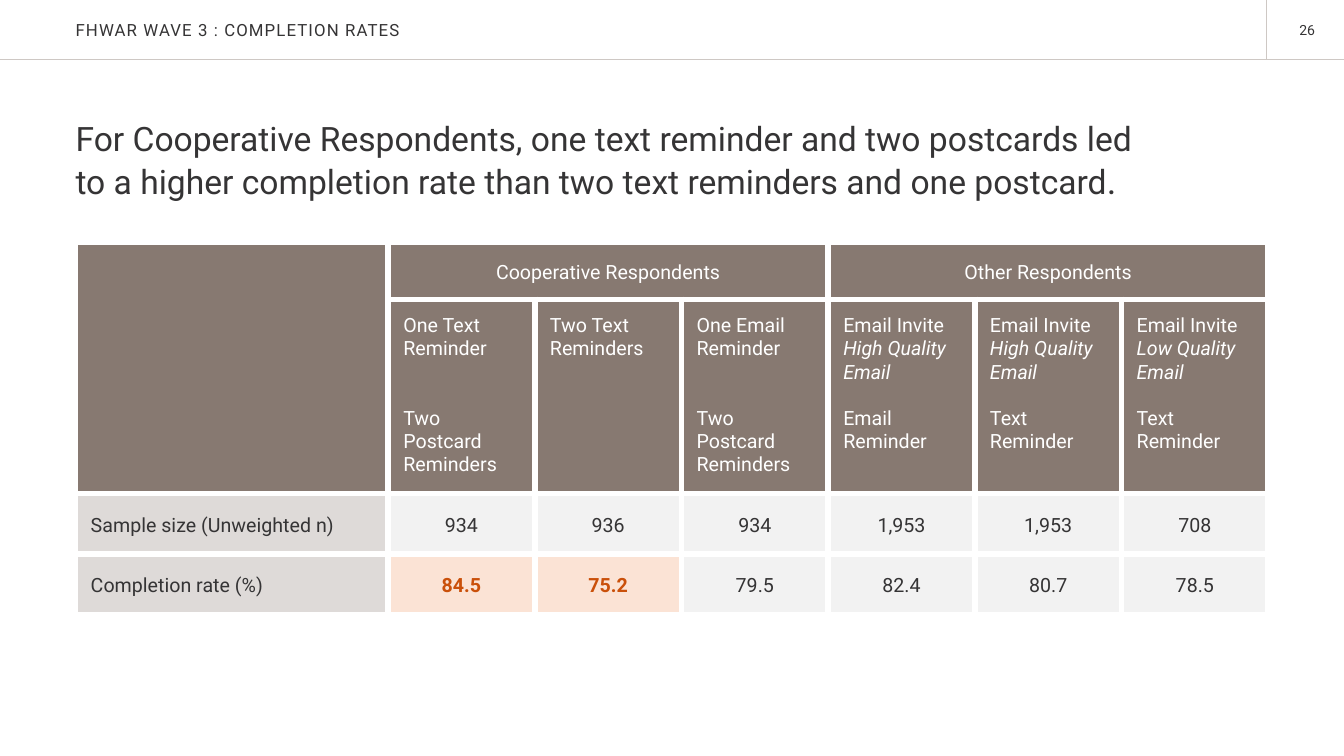
from lxml.etree import SubElement
from pptx import Presentation
from pptx.dml.color import RGBColor
from pptx.enum.shapes import MSO_CONNECTOR
from pptx.enum.text import MSO_ANCHOR as Anchor, PP_ALIGN as Align
from pptx.oxml.ns import qn
from pptx.util import Inches, Pt

FONT = "Roboto"
INK, WHITE, RULE, ACCENT = "353435", "FFFFFF", "CEC8C4", "CA500A"
HEADER_FILL, LABEL_FILL, VALUE_FILL, ACCENT_FILL = "877971", "DEDAD8", "F2F2F2", "FBE3D5"

SECTION = "FHWAR WAVE 3 : COMPLETION RATES"
PAGE_NUMBER = "26"
HEADLINE = [
    ("For Cooperative Respondents, one text reminder and two postcards led to a higher "
     "completion rate than two text reminders and one postcard", {"size": 24}),
    (".", {"size": 26}),
]
GROUPS = ["Cooperative Respondents", "Other Respondents"]
# Each line of a treatment: text, blank lines' worth of space before it, italic
TREATMENTS = [
    [("One Text Reminder", 0, False), ("Two Postcard Reminders", 2, False)],
    [("Two Text Reminders", 0, False)],
    [("One Email Reminder", 0, False), ("Two Postcard Reminders", 2, False)],
    [("Email Invite", 0, False), ("High Quality Email", 0, True), ("Email Reminder", 1, False)],
    [("Email Invite", 0, False), ("High Quality Email", 0, True), ("Text Reminder", 1, False)],
    [("Email Invite", 0, False), ("Low Quality Email", 0, True), ("Text Reminder", 1, False)],
]
RESULTS = [
    ("Sample size (Unweighted n)", ["934", "936", "934", "1,953", "1,953", "708"]),
    ("Completion rate (%)", ["84.5", "75.2", "79.5", "82.4", "80.7", "78.5"]),
]
HIGHLIGHTED = {"84.5", "75.2"}

WIDTH, HEIGHT = 13.33, 7.5
LEFT, BAR_HEIGHT, NUMBER_LEFT = 0.75, 0.59, 12.56
TABLE_TOP, LABEL_WIDTH, VALUE_WIDTH = 2.4, 3.1, 1.455
ROW_HEIGHTS = [0.57, 1.9, 0.6, 0.6]
PADDING, GAP_POINTS, LINE_POINTS = 0.15, 4.5, 16.5
GROUP_SIZE = len(TREATMENTS) // len(GROUPS)


def rgb(value):
    return RGBColor.from_string(value)


def add_span(para, text, size=14, color=INK, **formats):
    span = para.add_run()
    span.text = text
    span.font.color.rgb = rgb(color)
    for name, value in {"name": FONT, "size": Pt(size), **formats}.items():
        setattr(span.font, name, value)
    return span


def add_box(page, left, top, width, height, margin=0, anchor=Anchor.TOP):
    """Add a wrapping text box and return its first paragraph."""
    frame = page.shapes.add_textbox(*map(Inches, (left, top, width, height))).text_frame
    frame.word_wrap = True
    frame.vertical_anchor = anchor
    for side in ("left", "right", "top", "bottom"):
        setattr(frame, f"margin_{side}", Inches(margin))
    return frame.paragraphs[0]


def add_rule(page, *ends):
    line = page.shapes.add_connector(MSO_CONNECTOR.STRAIGHT, *map(Inches, ends))
    line.line.color.rgb = rgb(RULE)
    line.line.width = Pt(0.65)
    SubElement(line._element.spPr, qn("a:effectLst"))


def style_cell(cell, fill, anchor=Anchor.MIDDLE):
    """Give a cell its white gaps, padding and fill."""
    properties = cell._tc.get_or_add_tcPr()
    for edge in "LRTB":
        border = SubElement(properties, qn(f"a:ln{edge}"), w=str(Pt(GAP_POINTS)))
        SubElement(SubElement(border, qn("a:solidFill")), qn("a:srgbClr"), val=WHITE)
    for side in ("left", "right", "top", "bottom"):
        setattr(cell, f"margin_{side}", Inches(PADDING))
    cell.vertical_anchor = anchor
    cell.fill.solid()
    cell.fill.fore_color.rgb = rgb(fill)


def write_cell(cell, text, align=Align.CENTER, **formats):
    para = cell.text_frame.paragraphs[0]
    para.alignment = align
    para.line_spacing = 1.15
    add_span(para, text, **formats)


def write_treatment(cell, lines):
    frame = cell.text_frame
    for index, (text, blanks, italic) in enumerate(lines):
        para = frame.add_paragraph() if index else frame.paragraphs[0]
        para.space_before = Pt(blanks * LINE_POINTS)
        add_span(para, text, color=WHITE, italic=italic)


def add_results_table(page):
    widths = [LABEL_WIDTH] + [VALUE_WIDTH] * len(TREATMENTS)
    table = page.shapes.add_table(
        len(ROW_HEIGHTS), len(widths), Inches(LEFT), Inches(TABLE_TOP),
        Inches(sum(widths)), Inches(sum(ROW_HEIGHTS))).table
    table.first_row = table.horz_banding = False
    for column, width in zip(table.columns, widths):
        column.width = Inches(width)
    for row, height in zip(table.rows, ROW_HEIGHTS):
        row.height = Inches(height)

    for column in range(len(widths)):
        style_cell(table.cell(0, column), HEADER_FILL)
        style_cell(table.cell(1, column), HEADER_FILL, Anchor.TOP)
    table.cell(0, 0).merge(table.cell(1, 0))
    for index, group in enumerate(GROUPS):
        first = 1 + index * GROUP_SIZE
        table.cell(0, first).merge(table.cell(0, first + GROUP_SIZE - 1))
        write_cell(table.cell(0, first), group, color=WHITE)
    for column, lines in enumerate(TREATMENTS, 1):
        write_treatment(table.cell(1, column), lines)

    for row, (label, values) in enumerate(RESULTS, 2):
        style_cell(table.cell(row, 0), LABEL_FILL)
        write_cell(table.cell(row, 0), label, Align.LEFT)
        for column, value in enumerate(values, 1):
            marked = value in HIGHLIGHTED
            cell = table.cell(row, column)
            style_cell(cell, ACCENT_FILL if marked else VALUE_FILL)
            write_cell(cell, value, color=ACCENT if marked else INK, bold=marked)


def main():
    deck = Presentation()
    deck.slide_width, deck.slide_height = Inches(WIDTH), Inches(HEIGHT)
    page = deck.slides.add_slide(deck.slide_layouts[6])

    number = add_box(page, 12.64, 0, 0.5, 0.6, margin=0.1, anchor=Anchor.MIDDLE)
    number.alignment = Align.RIGHT
    add_span(number, PAGE_NUMBER, size=10)
    add_rule(page, 0, BAR_HEIGHT, WIDTH, BAR_HEIGHT)
    add_rule(page, NUMBER_LEFT, 0, NUMBER_LEFT, BAR_HEIGHT)

    section = add_box(page, LEFT, 0, 8.19, 0.6, anchor=Anchor.MIDDLE)
    span = add_span(section, SECTION, size=12)
    span._r.get_or_add_rPr().set("spc", "80")

    headline = add_box(page, LEFT, 1.17, 10.7, 1)
    for text, formats in HEADLINE:
        add_span(headline, text, **formats)

    add_results_table(page)
    deck.save("out.pptx")


if __name__ == "__main__":
    main()
